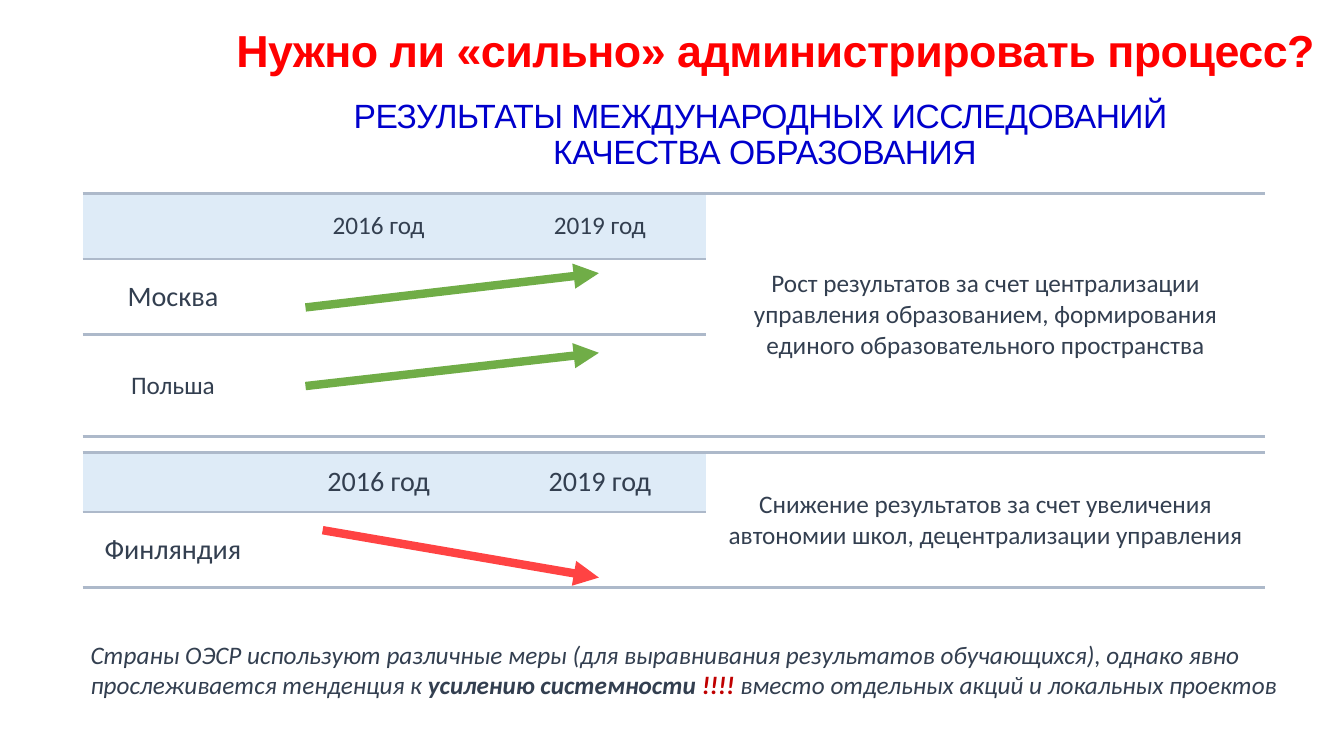
"""Build a slide comparing results under centralised and decentralised school management."""
from lxml.etree import SubElement
from pptx import Presentation
from pptx.dml.color import RGBColor
from pptx.enum.shapes import MSO_CONNECTOR
from pptx.enum.text import MSO_ANCHOR, PP_ALIGN
from pptx.oxml import parse_xml
from pptx.oxml.ns import nsdecls, qn
from pptx.util import Inches, Pt

RED = RGBColor(0xFF, 0x00, 0x00)
BLUE = RGBColor(0x00, 0x00, 0xCC)
INK = RGBColor(0x33, 0x3F, 0x50)
DARK_RED = RGBColor(0xC0, 0x00, 0x00)
HEADER_FILL = RGBColor(0xDE, 0xEB, 0xF7)
RULE = RGBColor(0xAD, 0xB9, 0xCA)
GROWTH = RGBColor(0x70, 0xAD, 0x47)
DECLINE = RGBColor(0xFF, 0x43, 0x43)
PLAIN_TABLE_STYLE = "{2D5ABB26-0587-4C30-8999-92F81FD0307C}"

HEADINGS = [
    ("Нужно ли «сильно» администрировать процесс?", (2.05, 0.24, 11.28, 0.57), 32, True, RED),
    ("РЕЗУЛЬТАТЫ МЕЖДУНАРОДНЫХ ИССЛЕДОВАНИЙ \vКАЧЕСТВА ОБРАЗОВАНИЯ",
     (2.55, 0.94, 10.07, 0.81), 24, False, BLUE),
]
YEARS = ["2016 год", "2019 год"]
TABLE_LEFT = 0.82
COLUMN_WIDTHS = [1.79, 2.29, 2.1, 5.55]
TABLES = [
    {"top": 1.92, "heights": [0.65, 0.75, 1.01], "year_size": 18,
     "places": [("Москва", 20.1), ("Польша", 18)],
     "conclusion": "Рост результатов за счет централизации управления образованием, "
                   "формирования единого образовательного пространства"},
    {"top": 4.49, "heights": [0.59, 0.75], "year_size": 20.1,
     "places": [("Финляндия", 20.1)],
     "conclusion": "Снижение результатов за счет увеличения автономии школ, "
                   "децентрализации управления"},
]
ARROWS = [
    ((3.03, 3.05), (5.94, 2.71), GROWTH),
    ((3.03, 3.83), (5.94, 3.5), GROWTH),
    ((3.2, 5.26), (5.94, 5.73), DECLINE),
]
SUMMARY_BOX = (0.8, 6.29, 12.23, 0.71)
SUMMARY = [
    ("Страны ОЭСР используют различные меры (для выравнивания результатов обучающихся), "
     "однако явно прослеживается тенденция к ", False, INK),
    ("усилению системности ", True, INK),
    ("!!!! ", True, DARK_RED),
    ("вместо отдельных акций и локальных проектов", False, INK),
]


def style_font(font, name, size, color, bold=False):
    font.name = name
    font.size = Pt(size)
    font.bold = bold
    font.color.rgb = color


def add_box(slide, box):
    shape = slide.shapes.add_textbox(*map(Inches, box))
    shape.text_frame.word_wrap = True
    return shape.text_frame


def add_heading(slide, text, box, size, bold, color):
    text_frame = add_box(slide, box)
    text_frame.vertical_anchor = MSO_ANCHOR.MIDDLE
    text_frame.text = text
    paragraph = text_frame.paragraphs[0]
    paragraph.alignment = PP_ALIGN.CENTER
    paragraph.line_spacing = 0.9
    for run in paragraph.runs:
        style_font(run.font, "Arial", size, color, bold)
        run.font._element.set("spc", "-40")


def fill_cell(cell, text, size):
    cell.text = text
    cell.vertical_anchor = MSO_ANCHOR.MIDDLE
    paragraph = cell.text_frame.paragraphs[0]
    paragraph.alignment = PP_ALIGN.CENTER
    for run in paragraph.runs:
        style_font(run.font, "Calibri", size, INK)


def set_borders(cell, sides):
    properties = cell._tc.get_or_add_tcPr()
    for index, side in enumerate(sides):
        properties.insert(index, parse_xml(
            f'<a:ln{side} {nsdecls("a")} w="{Pt(2.25)}"><a:solidFill>'
            f'<a:srgbClr val="{RULE}"/></a:solidFill></a:ln{side}>'))


def add_results_table(slide, top, heights, year_size, places, conclusion):
    frame = slide.shapes.add_table(
        len(heights), len(COLUMN_WIDTHS), Inches(TABLE_LEFT), Inches(top),
        Inches(sum(COLUMN_WIDTHS)), Inches(sum(heights)))
    table = frame.table
    table.first_row = table.horz_banding = False
    table._tbl.tblPr.find(qn("a:tableStyleId")).text = PLAIN_TABLE_STYLE
    for column, width in zip(table.columns, COLUMN_WIDTHS):
        column.width = Inches(width)
    for row, height in zip(table.rows, heights):
        row.height = Inches(height)

    last_row, last_column = len(heights) - 1, len(COLUMN_WIDTHS) - 1
    table.cell(0, last_column).merge(table.cell(last_row, last_column))
    for column, year in enumerate(YEARS, 1):
        fill_cell(table.cell(0, column), year, year_size)
    for row, (place, size) in enumerate(places, 1):
        fill_cell(table.cell(row, 0), place, size)
    fill_cell(table.cell(0, last_column), conclusion, 18)

    for row in range(last_row + 1):
        for column in range(last_column + 1):
            cell = table.cell(row, column)
            in_grid = column < last_column
            if row == 0 and in_grid:
                cell.fill.solid()
                cell.fill.fore_color.rgb = HEADER_FILL
            else:
                cell.fill.background()
            has_top = row == 0 or (row == 1 and in_grid)
            has_bottom = row in (0, last_row)
            set_borders(cell, "T" * has_top + "B" * has_bottom)


def add_arrow(slide, start, end, color):
    arrow = slide.shapes.add_connector(
        MSO_CONNECTOR.STRAIGHT, *map(Inches, start + end))
    arrow.line.color.rgb = color
    arrow.line.width = Pt(6)
    SubElement(arrow.line._get_or_add_ln(), qn("a:tailEnd"), type="triangle")
    SubElement(arrow._element.spPr, qn("a:effectLst"))


def add_summary(slide):
    paragraph = add_box(slide, SUMMARY_BOX).paragraphs[0]
    for text, bold, color in SUMMARY:
        run = paragraph.add_run()
        run.text = text
        style_font(run.font, "Calibri", 18, color, bold)
        run.font.italic = True


def main():
    presentation = Presentation()
    presentation.slide_width = Inches(13.33)
    presentation.slide_height = Inches(7.5)
    slide = presentation.slides.add_slide(presentation.slide_layouts[6])
    for heading in HEADINGS:
        add_heading(slide, *heading)
    for results in TABLES:
        add_results_table(slide, **results)
    add_summary(slide)
    for arrow in ARROWS:
        add_arrow(slide, *arrow)
    presentation.save("out.pptx")


if __name__ == "__main__":
    main()
